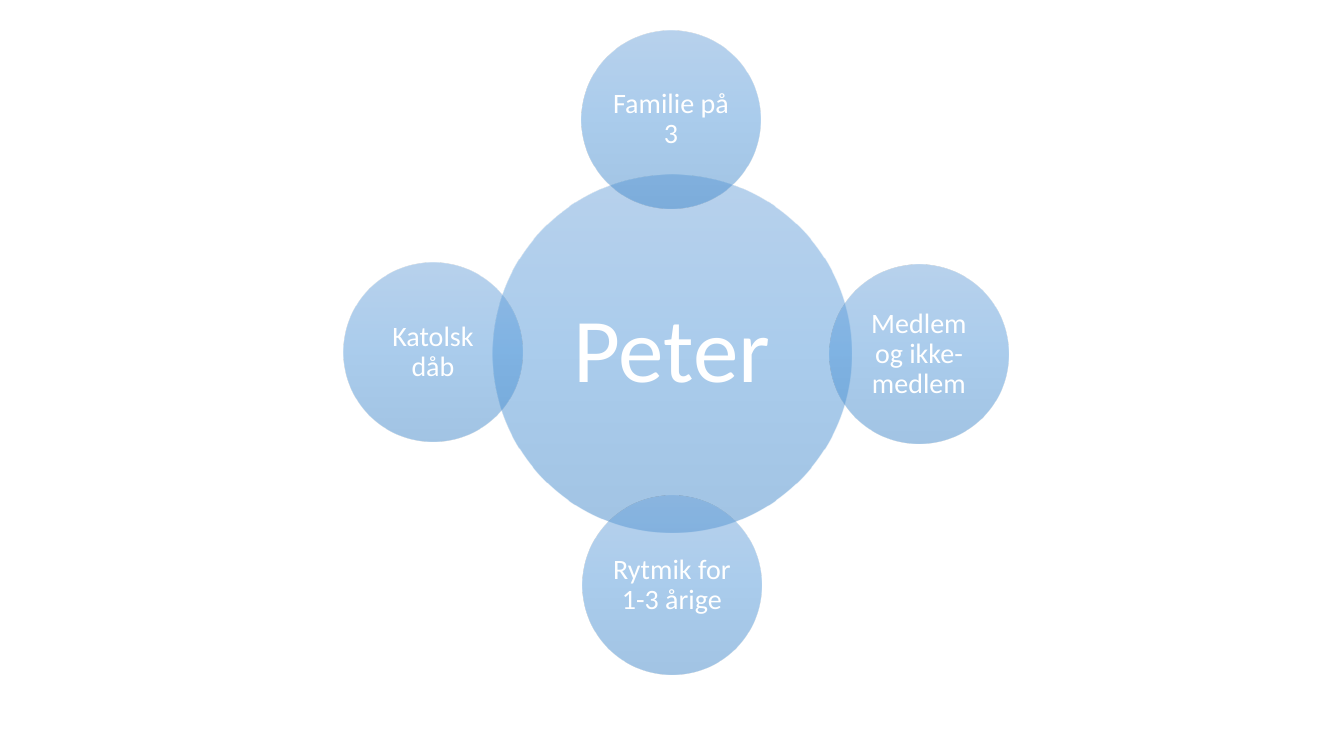
from dataclasses import dataclass

from lxml.etree import SubElement
from pptx import Presentation
from pptx.dml.color import RGBColor
from pptx.enum.shapes import MSO_SHAPE as Shape
from pptx.enum.text import MSO_ANCHOR as Anchor, PP_ALIGN as Align
from pptx.oxml.ns import qn
from pptx.util import Inches, Pt


@dataclass(frozen=True)
class Theme:
    font: str = "Calibri"
    text_color: str = "FFFFFF"
    gradient: tuple = ((0, "71A6DB"), (50, "559BDB"), (100, "448ACA"))
    opacity: int = 50
    hub_size: int = 65
    satellite_size: int = 20
    line_spacing: float = 0.9


class SlideBuilder:
    def __init__(self, slide, theme):
        self.slide = slide
        self.theme = theme

    def fill_gradient(self, shape):
        """Fill top to bottom with the theme's translucent colours."""
        shape.fill.gradient()
        shape.fill.gradient_angle = 270
        stops = shape.element.spPr.find(".//" + qn("a:gsLst"))
        for stop in list(stops):
            stops.remove(stop)
        for position, color in self.theme.gradient:
            stop = SubElement(stops, qn("a:gs"), pos=str(position * 1000))
            rgb = SubElement(stop, qn("a:srgbClr"), val=color)
            SubElement(rgb, qn("a:alpha"), val=str(self.theme.opacity * 1000))

    def circle(self, text, left, top, diameter, size, inset):
        shape = self.slide.shapes.add_shape(
            Shape.OVAL, Inches(left), Inches(top), Inches(diameter), Inches(diameter)
        )
        shape.shadow.inherit = False
        shape.line.fill.background()
        self.fill_gradient(shape)

        frame = shape.text_frame
        frame.word_wrap = True
        frame.vertical_anchor = Anchor.MIDDLE
        frame.margin_left = frame.margin_right = Inches(inset)
        frame.margin_top = frame.margin_bottom = Inches(inset)
        frame.text = text
        paragraph = frame.paragraphs[0]
        paragraph.alignment = Align.CENTER
        paragraph.line_spacing = self.theme.line_spacing
        font = paragraph.runs[0].font
        font.name = self.theme.font
        font.size = Pt(size)
        font.color.rgb = RGBColor.from_string(self.theme.text_color)


def main():
    presentation = Presentation()
    presentation.slide_width = Inches(13.33)
    presentation.slide_height = Inches(7.5)
    slide = presentation.slides.add_slide(presentation.slide_layouts[6])
    theme = Theme()
    builder = SlideBuilder(slide, theme)

    # Central circle
    builder.circle("Peter", 4.89, 1.73, 3.55, theme.hub_size, 0.09)

    # Surrounding circles, clockwise from the top
    satellites = (
        ("Familie på 3", 5.77, 0.3),
        ("Medlem og ikke-medlem", 8.23, 2.63),
        ("Rytmik for 1-3 årige", 5.78, 4.92),
        ("Katolsk dåb", 3.41, 2.61),
    )
    for text, left, top in satellites:
        builder.circle(text, left, top, 1.77, theme.satellite_size, 0.03)

    presentation.save("out.pptx")


if __name__ == "__main__":
    main()
